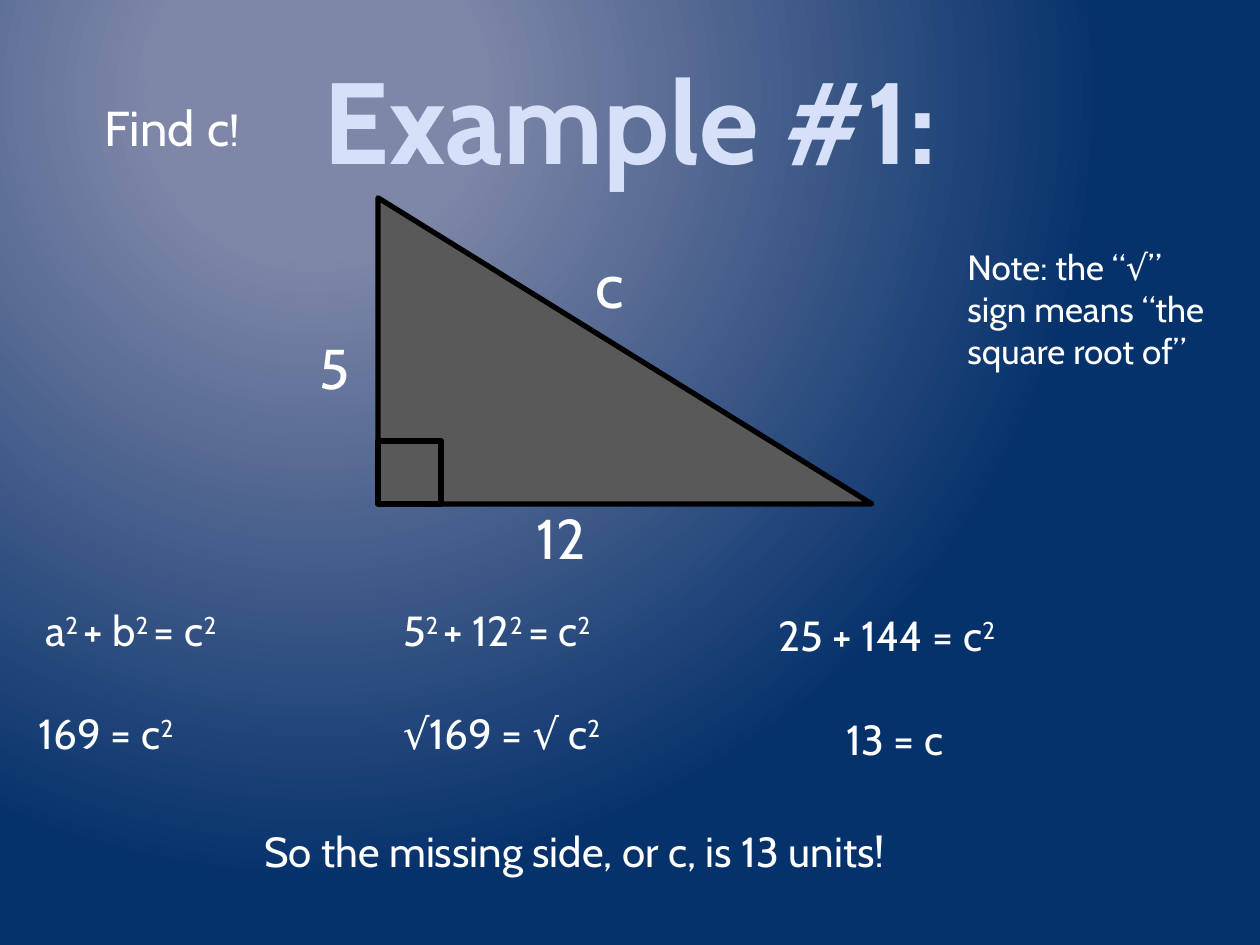
"""Build a slide that solves a right triangle with the Pythagorean theorem."""
from lxml.etree import SubElement
from pptx import Presentation
from pptx.dml.color import RGBColor
from pptx.enum.shapes import MSO_SHAPE as Shape
from pptx.enum.text import MSO_AUTO_SIZE as AutoSize, PP_ALIGN as Align
from pptx.oxml.ns import qn
from pptx.util import Inches, Pt

WIDTH, HEIGHT = 10, 7.5
FONT = "Cabin"
WHITE = RGBColor(0xFF, 0xFF, 0xFF)
BLACK = RGBColor(0x00, 0x00, 0x00)
GRAY = RGBColor(0x59, 0x59, 0x59)
TITLE_BLUE = RGBColor(0xD6, 0xE1, 0xF9)
GLOW_BLUE = RGBColor(0x7F, 0x87, 0xA8)
DEEP_BLUE = RGBColor(0x06, 0x32, 0x6C)

GLOW_STOPS = [(0.2, GLOW_BLUE), (1, DEEP_BLUE)]
GLOW_CENTER = {"l": "50000", "t": "20000", "r": "100000", "b": "100000"}

TITLE = ("Example #1:", (2.42, 0.34, 5.16, 1.21))
TASK = ([("Find", 28), (" ", 32), ("c", 28), ("!", 24)], (0.5, 0.67, 1.5, 0.64))
SIDE_LABELS = [
    ("c", 36, (4.63, 1.9, 0.66, 0.71)),
    ("5", 32, (2.44, 2.6, 0.66, 0.64)),
    ("12", 32, (4.16, 3.95, 1.07, 0.64)),
]
STEPS = [
    [("a^2 ^+ b^2 ^= c^2", 0.26, 1.85), ("5^2 ^+ 12^2 ^= c^2", 3.1, 2.08),
     ("25 + 144 = c^2", 6.08, 2.21)],
    [("169 = c^2", 0.21, 1.45), ("√169 = √ c^2", 3.1, 1.9), ("13 = c", 6.62, 1.12)],
]
STEP_TOP, STEP_PITCH, STEP_HEIGHT = 4.75, 0.82, 0.5
COLUMN_DROPS = [0, 0, 0.04]
ANSWER = ("So the missing side, or c, is 13 units!", (2, 6.5, 5.58, 0.5))
NOTE = ("Note: the “√” sign means “the square root of”", (7.58, 1.9, 2.25, 1.11))

TRIANGLE = (3, 1.57, 3.92, 2.43)
CORNER_SIZE = 0.5


def add_text(slide, content, box, size=24, color=WHITE, bold=False,
             align=Align.LEFT, wrap=True):
    """Add a text box; a caret switches superscript on and off."""
    frame = slide.shapes.add_textbox(*map(Inches, box)).text_frame
    frame.word_wrap = wrap
    frame.auto_size = AutoSize.SHAPE_TO_FIT_TEXT
    paragraph = frame.paragraphs[0]
    paragraph.alignment = align
    pieces = [(content, size)] if isinstance(content, str) else content
    for text, piece_size in pieces:
        for index, part in enumerate(text.split("^")):
            run = paragraph.add_run()
            run.text = part
            font = run.font
            font.name, font.size, font.bold = FONT, Pt(piece_size), bold
            font.color.rgb = color
            if index % 2:
                font._element.set("baseline", "30000")


def add_outlined_shape(slide, kind, box):
    """Add a gray shape with a black outline."""
    shape = slide.shapes.add_shape(kind, *map(Inches, box))
    shape.shadow.inherit = False
    shape.fill.solid()
    shape.fill.fore_color.rgb = GRAY
    shape.line.color.rgb = BLACK
    shape.line.width = Pt(3)


def paint_background(slide):
    """Fill the background with a circular glow."""
    fill = slide.background.fill
    fill.gradient()
    for stop, (position, color) in zip(fill.gradient_stops, GLOW_STOPS):
        stop.position = position
        stop.color.rgb = color
    gradient = slide.element.find(".//" + qn("a:gradFill"))
    gradient.remove(gradient.find(qn("a:lin")))
    circle = SubElement(gradient, qn("a:path"), {"path": "circle"})
    SubElement(circle, qn("a:fillToRect"), GLOW_CENTER)


def main():
    """Assemble and save the slide."""
    presentation = Presentation()
    presentation.slide_width = Inches(WIDTH)
    presentation.slide_height = Inches(HEIGHT)
    slide = presentation.slides.add_slide(presentation.slide_layouts[6])
    paint_background(slide)

    add_text(slide, *TITLE, size=66, color=TITLE_BLUE, bold=True,
             align=Align.CENTER, wrap=False)
    add_outlined_shape(slide, Shape.RIGHT_TRIANGLE, TRIANGLE)
    left, top, _, height = TRIANGLE
    corner_top = top + height - CORNER_SIZE
    add_outlined_shape(slide, Shape.RECTANGLE,
                       (left, corner_top, CORNER_SIZE, CORNER_SIZE))

    add_text(slide, *TASK, align=Align.RIGHT)
    for label, size, box in SIDE_LABELS:
        add_text(slide, label, box, size=size)
    for row, steps in enumerate(STEPS):
        for (equation, left, width), drop in zip(steps, COLUMN_DROPS):
            top = STEP_TOP + row * STEP_PITCH + drop
            add_text(slide, equation, (left, top, width, STEP_HEIGHT), wrap=False)
    add_text(slide, *ANSWER)
    add_text(slide, *NOTE, size=20)
    presentation.save("out.pptx")


if __name__ == "__main__":
    main()
